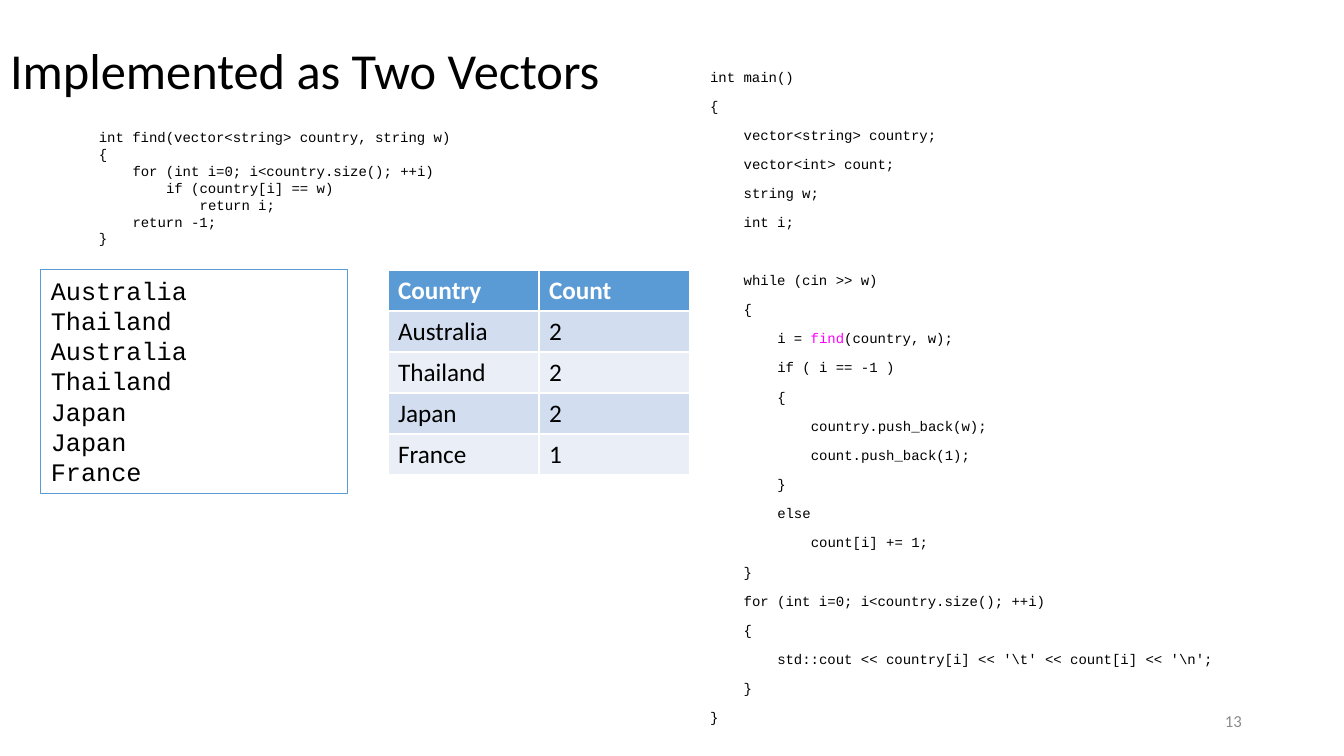
from pptx import Presentation
from pptx.dml.color import RGBColor
from pptx.enum.shapes import MSO_SHAPE
from pptx.enum.text import MSO_ANCHOR, MSO_AUTO_SIZE, PP_ALIGN
from pptx.util import Pt

RECT = MSO_SHAPE.RECTANGLE
TOP, MIDDLE = MSO_ANCHOR.TOP, MSO_ANCHOR.MIDDLE
NO_FIT = MSO_AUTO_SIZE.NONE
LEFT, RIGHT = PP_ALIGN.LEFT, PP_ALIGN.RIGHT

EMU_PER_PX = 914400 / 100.8
SANS, MONO = "Calibri", "Courier New"
BLACK, WHITE, GRAY = "000000", "FFFFFF", "8C8C8C"
BLUE, MAGENTA = "5B9BD5", "FF00FF"
BANDS = ["D2DEEF", "EAEFF7"]
MONO_ADVANCE = 0.6  # character width as a share of the font size

FIND_CODE = """\
int find(vector<string> country, string w)
{
    for (int i=0; i<country.size(); ++i)
        if (country[i] == w)
            return i;
    return -1;
}"""

MAIN_CODE = r"""int main()
{
    vector<string> country;
    vector<int> count;
    string w;
    int i;

    while (cin >> w)
    {
        i = find(country, w);
        if ( i == -1 )
        {
            country.push_back(w);
            count.push_back(1);
        }
        else
            count[i] += 1;
    }
    for (int i=0; i<country.size(); ++i)
    {
        std::cout << country[i] << '\t' << count[i] << '\n';
    }
}"""

INPUT_WORDS = "Australia\nThailand\nAustralia\nThailand\nJapan\nJapan\nFrance"
COUNTS = [("Country", "Count"), ("Australia", "2"), ("Thailand", "2"),
          ("Japan", "2"), ("France", "1")]


def px(n):
    return round(n * EMU_PER_PX)


def rgb(color):
    return RGBColor.from_string(color)


def place(sp, x, y, w, h):
    sp.left, sp.top, sp.width, sp.height = px(x), px(y), px(w), px(h)


def set_font(p, size, name, color=BLACK, bold=False):
    p.font.size, p.font.name, p.font.bold = Pt(size), name, bold
    p.font.color.rgb = rgb(color)


def write_code(tf, code, size, spacing=1.0, before=0, highlight=None):
    """Write one paragraph per line; a blank line becomes space before the next."""
    tf.word_wrap, tf.auto_size, tf.vertical_anchor = True, NO_FIT, TOP
    p, gap = tf.paragraphs[0], before
    for i, line in enumerate(code.split("\n")):
        if not line:
            gap += before + size * spacing * 1.13
            continue
        if i:
            p = tf.add_paragraph()
        text = line.lstrip()
        indent = Pt((len(line) - len(text)) * size * MONO_ADVANCE)
        pPr = p._p.get_or_add_pPr()
        pPr.set("marL", str(indent))
        pPr.set("indent", "0")
        p.alignment, p.line_spacing, p.space_before = LEFT, spacing, Pt(gap)
        pPr.get_or_add_buNone() if hasattr(pPr, "get_or_add_buNone") else add_no_bullet(pPr)
        set_font(p, size, MONO)
        if highlight and highlight in text:
            start, end = text.split(highlight)
            for part in (start, highlight, end):
                r = p.add_run()
                r.text = part
                if part == highlight:
                    r.font.color.rgb = rgb(MAGENTA)
        else:
            p.add_run().text = text
        gap = before


def add_no_bullet(pPr):
    bullet = pPr.makeelement(
        "{http://schemas.openxmlformats.org/drawingml/2006/main}buNone", {})
    pPr.insert_element_before(bullet, "a:tabLst", "a:defRPr", "a:extLst")


def write_line(tf, text, size, color, align, spacing=1.0):
    tf.word_wrap, tf.auto_size, tf.vertical_anchor = True, NO_FIT, MIDDLE
    p = tf.paragraphs[0]
    p.text, p.alignment, p.line_spacing = text, align, spacing
    set_font(p, size, SANS, color)


def add_text_box(s, x, y, w, h):
    return s.shapes.add_textbox(px(x), px(y), px(w), px(h)).text_frame


def add_outlined_box(s, x, y, w, h):
    sp = s.shapes.add_shape(RECT, px(x), px(y), px(w), px(h))
    sp.shadow.inherit = False
    sp.fill.background()
    sp.line.color.rgb, sp.line.width = rgb(BLUE), Pt(0.75)
    return sp.text_frame


def add_count_table(s, rows, x, y, col_w, row_h):
    n_cols = len(rows[0])
    table = s.shapes.add_table(len(rows), n_cols, px(x), px(y),
                               px(col_w * n_cols), px(row_h * len(rows))).table
    for col in table.columns:
        col.width = px(col_w)
    for i, values in enumerate(rows):
        table.rows[i].height = px(row_h)
        header = i == 0
        for j, value in enumerate(values):
            cell = table.cell(i, j)
            cell.fill.solid()
            cell.fill.fore_color.rgb = rgb(BLUE if header else BANDS[(i - 1) % 2])
            p = cell.text_frame.paragraphs[0]
            p.text = value
            set_font(p, 18, SANS, WHITE if header else BLACK, header)


def main():
    prs = Presentation()
    prs.slide_width, prs.slide_height = px(1344), px(756)
    s = prs.slides.add_slide(prs.slide_layouts[1])

    title, body = s.shapes.title, s.placeholders[1]
    place(title, 0, 0, 642, 146)
    write_line(title.text_frame, "Implemented as Two Vectors", 36, BLACK, LEFT, 0.9)
    place(body, 700, 65, 551, 617)
    write_code(body.text_frame, MAIN_CODE, 10, 0.9, 10, "find")

    write_line(add_text_box(s, 950, 701, 302, 40), "13", 12, GRAY, RIGHT)
    write_code(add_text_box(s, 89, 124, 451, 129), FIND_CODE, 10)
    write_code(add_outlined_box(s, 41, 270, 307, 224), INPUT_WORDS, 18)
    add_count_table(s, COUNTS, 388, 270, 151, 41)
    prs.save("out.pptx")


if __name__ == "__main__":
    main()
